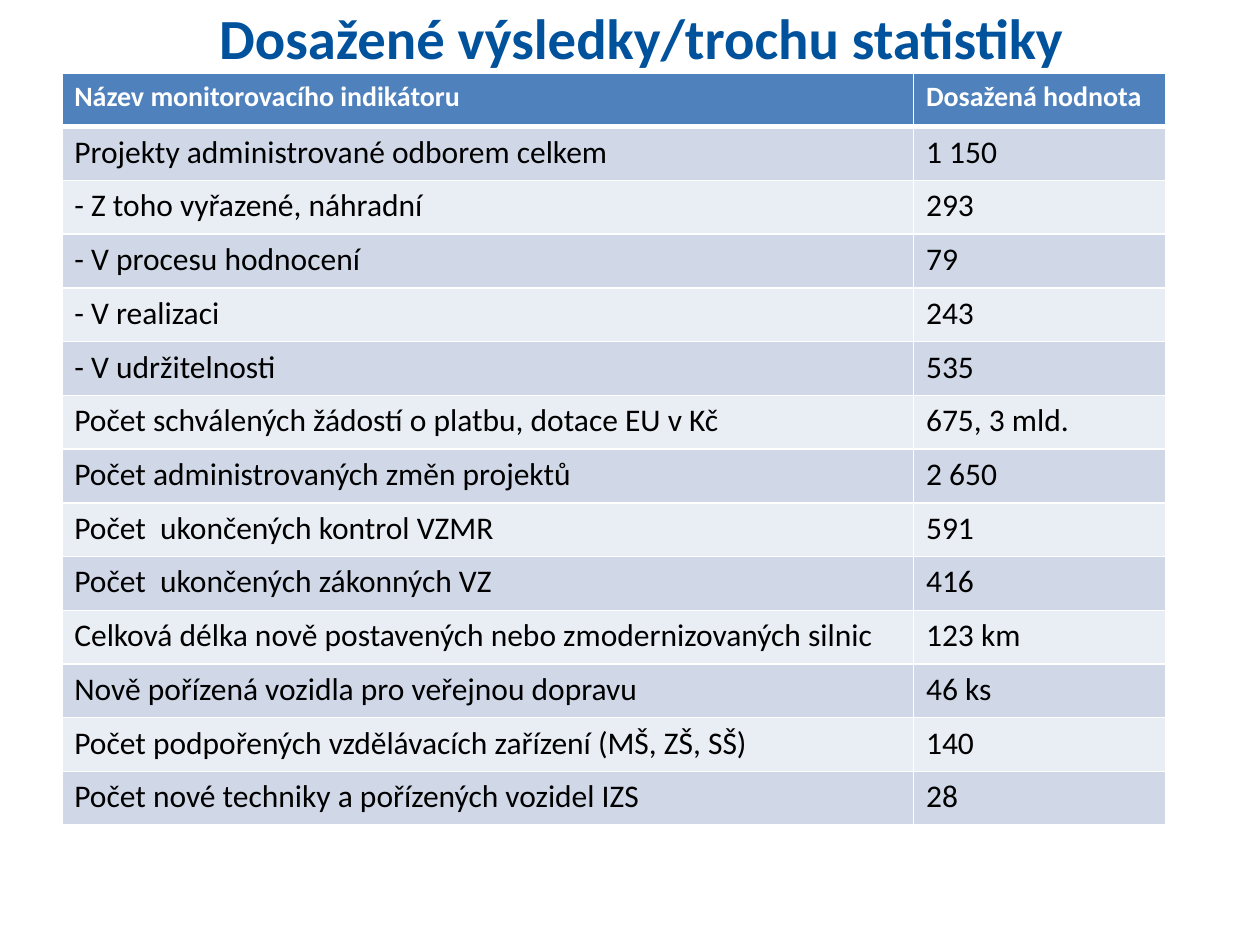
from lxml import etree
from pptx import Presentation
from pptx import util as u
from pptx.dml.color import RGBColor
from pptx.enum import text
from pptx.oxml.ns import qn

WIDTH, HEIGHT = 10, 7.5
COLORS = {
    "title": "00529C",
    "header": "4F81BD",
    "odd": "D0D8E8",
    "even": "E9EDF4",
    "body": "000000",
    "white": "FFFFFF",
}
COLUMNS = (6.76, 2)
ROW_HEIGHT = 5.97 / 14
ROWS = [
    ("Název monitorovacího indikátoru", "Dosažená hodnota"),
    ("Projekty administrované odborem celkem", "1 150"),
    ("- Z toho vyřazené, náhradní", "293"),
    ("- V procesu hodnocení", "79"),
    ("- V realizaci", "243"),
    ("- V udržitelnosti", "535"),
    ("Počet schválených žádostí o platbu, dotace EU v Kč", "675, 3 mld."),
    ("Počet administrovaných změn projektů", "2 650"),
    ("Počet  ukončených kontrol VZMR", "591"),
    ("Počet  ukončených zákonných VZ", "416"),
    ("Celková délka nově postavených nebo zmodernizovaných silnic", "123 km"),
    ("Nově pořízená vozidla pro veřejnou dopravu", "46 ks"),
    ("Počet podpořených vzdělávacích zařízení (MŠ, ZŠ, SŠ)", "140"),
    ("Počet nové techniky a pořízených vozidel IZS", "28"),
]


def write(tf, content, size=18, color="body", bold=False, align=text.PP_ALIGN.LEFT):
    """Write one formatted paragraph into a text frame."""
    p = tf.paragraphs[0]
    p.alignment = align
    r = p.add_run()
    r.text = content
    r.font.name = "Calibri"
    r.font.size = u.Pt(size)
    r.font.bold = bold
    r.font.color.rgb = RGBColor.from_string(COLORS[color])


def add_title(slide, content):
    """Add the centred slide title."""
    sp = slide.shapes.add_textbox(
        u.Inches(0.59), u.Inches(0.02 * HEIGHT), u.Inches(0.9 * WIDTH), u.Inches(0.28)
    )
    tf = sp.text_frame
    tf.word_wrap = True
    tf.vertical_anchor = text.MSO_ANCHOR.MIDDLE
    write(tf, content, size=32.4, color="title", bold=True, align=text.PP_ALIGN.CENTER)


def set_borders(cell, top=1, bottom=1):
    """Give a cell white borders with widths in points."""
    tc_pr = cell._tc.get_or_add_tcPr()
    for side, width in (("L", 1), ("R", 1), ("T", top), ("B", bottom)):
        ln = etree.SubElement(tc_pr, qn(f"a:ln{side}"), w=str(u.Pt(width)))
        fill = etree.SubElement(ln, qn("a:solidFill"))
        etree.SubElement(fill, qn("a:srgbClr"), val=COLORS["white"])


def format_cell(cell, row, content):
    """Fill, border and write a cell according to its row."""
    header = row == 0
    set_borders(cell, top=3 if row == 1 else 1, bottom=3 if header else 1)
    band = "header" if header else "odd" if row % 2 else "even"
    cell.fill.solid()
    cell.fill.fore_color.rgb = RGBColor.from_string(COLORS[band])
    if header:
        write(cell.text_frame, content, size=16, color="white", bold=True)
    else:
        write(cell.text_frame, content)


def add_indicators(slide):
    """Add the table of indicators and their values."""
    table = slide.shapes.add_table(
        len(ROWS), len(COLUMNS), u.Inches(0.49), u.Inches(0.58),
        u.Inches(sum(COLUMNS)), u.Inches(ROW_HEIGHT * len(ROWS)),
    ).table
    for column, width in zip(table.columns, COLUMNS):
        column.width = u.Inches(width)
    for i, values in enumerate(ROWS):
        table.rows[i].height = u.Inches(ROW_HEIGHT)
        for j, value in enumerate(values):
            format_cell(table.cell(i, j), i, value)


def main():
    """Build and save the statistics slide."""
    prs = Presentation()
    prs.slide_width, prs.slide_height = u.Inches(WIDTH), u.Inches(HEIGHT)
    slide = prs.slides.add_slide(prs.slide_layouts[6])
    add_title(slide, "Dosažené výsledky/trochu statistiky")
    add_indicators(slide)
    prs.save("out.pptx")


if __name__ == "__main__":
    main()
